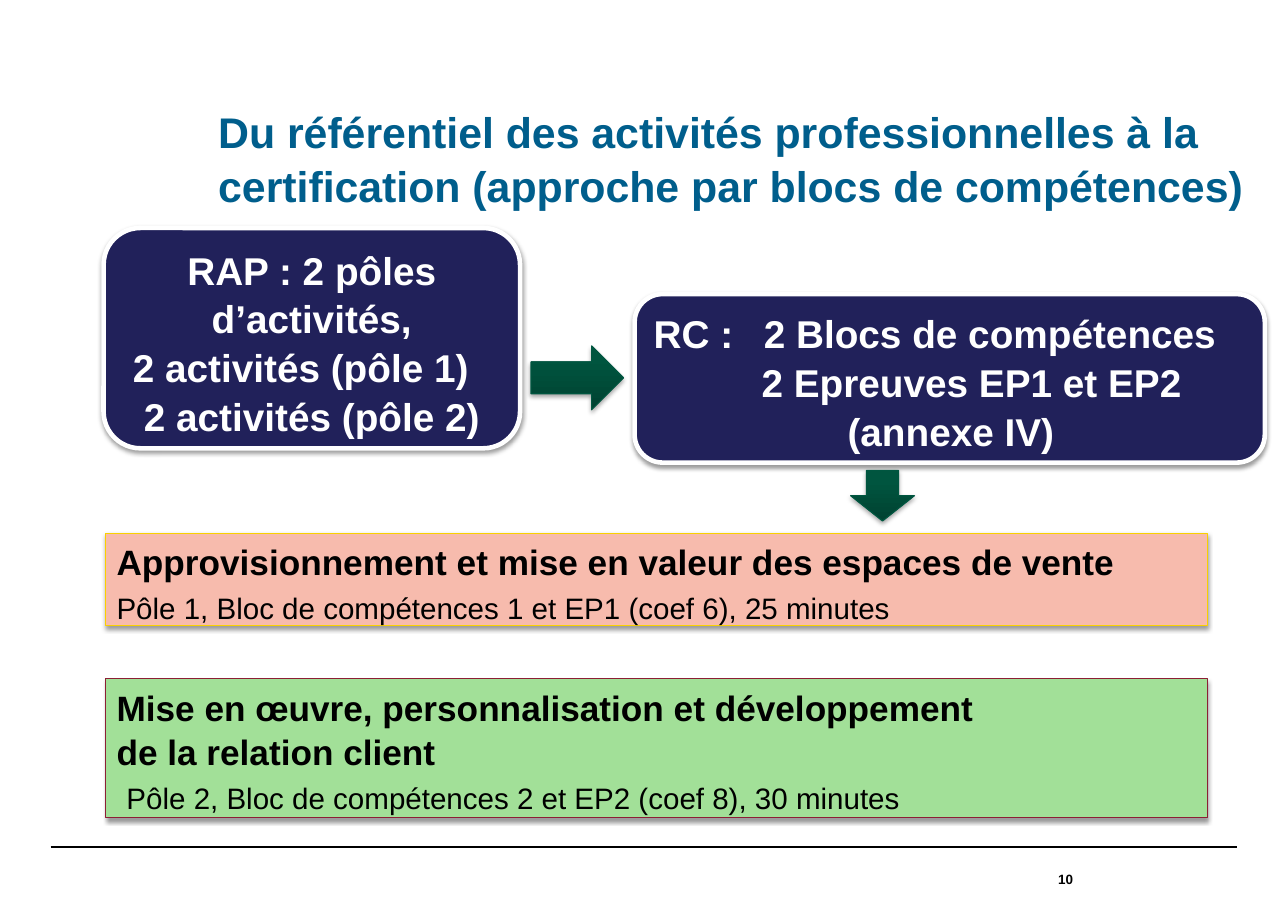
from pptx import Presentation
from pptx.dml.color import RGBColor
from pptx.enum.shapes import MSO_CONNECTOR as Link, MSO_SHAPE as Shape
from pptx.enum.text import MSO_ANCHOR as Anchor, PP_ALIGN as Align
from pptx.oxml.ns import qn
from pptx.util import Inches, Pt
from lxml.etree import SubElement as Sub

FONT = "Arial"
NAVY, WHITE, BLACK = "21215A", "FFFFFF", "000000"


def color(code):
    return RGBColor.from_string(code)


def place(box):
    return [Inches(v) for v in box]


def write(frame, rows, tint=BLACK, align=Align.LEFT, anchor=Anchor.TOP):
    """Fill a frame with rows of (text, size, bold, layout options)."""
    frame.word_wrap = True
    frame.vertical_anchor = anchor
    for i, (text, size, bold, opts) in enumerate(rows):
        para = frame.paragraphs[0] if i == 0 else frame.add_paragraph()
        para.text = text
        para.alignment = align
        para.line_spacing = opts.get("lead", 1.05)
        para.space_before = Pt(opts.get("before", 0))
        para.space_after = Pt(opts.get("after", 0))
        props = para._p.get_or_add_pPr()
        for side in ("marL", "marR"):
            props.set(side, str(Inches(opts.get(side, 0))))
        props.set("indent", "0")
        if "tab" in opts:
            tabs = Sub(props, qn("a:tabLst"))
            Sub(tabs, qn("a:tab"), pos=str(Inches(opts["tab"])), algn="l")
        for run in para.runs:
            font = run.font
            font.name, font.size, font.bold = FONT, Pt(size), bold
            font.color.rgb = color(tint)


def shade(shape, alpha):
    """Give the shape a soft shadow that falls straight down."""
    shape.shadow.inherit = False
    effects = shape._element.spPr.find(qn("a:effectLst"))
    outer = Sub(effects, qn("a:outerShdw"), blurRad=str(Pt(3.1)),
                dist=str(Pt(1.7)), dir="5400000", rotWithShape="0")
    tone = Sub(outer, qn("a:srgbClr"), val=BLACK)
    Sub(tone, qn("a:alpha"), val=str(alpha * 1000))


def draw(slide, kind, box, edge, width, fill=None, alpha=38):
    shape = slide.shapes.add_shape(kind, *place(box))
    if fill:
        shape.fill.solid()
        shape.fill.fore_color.rgb = color(fill)
    shape.line.color.rgb = color(edge)
    shape.line.width = Pt(width)
    shade(shape, alpha)
    return shape


def add_title(slide, box, text):
    title = slide.shapes.title
    title.left, title.top, title.width, title.height = place(box)
    write(title.text_frame, [(text, 28, True, {})], "005E8C")


def add_card(slide, box, rows, align):
    card = draw(slide, Shape.ROUNDED_RECTANGLE, box, WHITE, 3, NAVY)
    rows = [(text, 25.3, True, opts) for text, opts in rows]
    write(card.text_frame, rows, WHITE, align)


def add_band(slide, box, fill, edge, heads, note, opts):
    band = draw(slide, Shape.RECTANGLE, box, edge, 0.75, fill)
    rows = [(head, 23, True, {}) for head in heads]
    write(band.text_frame, rows + [(note, 19.3, False, opts)])


def add_arrow(slide, kind, box):
    arrow = draw(slide, kind, box, "005640", 0.75, alpha=35)
    arrow.fill.gradient()
    arrow.fill.gradient_angle = 90
    stops = zip(arrow.fill.gradient_stops, ("004231", "00553F"), (0, 0.8))
    for stop, tone, spot in stops:
        stop.color.rgb = color(tone)
        stop.position = spot


def add_footer(slide, box, number):
    left, top, width, height = box
    rule = slide.shapes.add_connector(
        Link.STRAIGHT, *place((left, top, left + width, top)))
    rule.line.color.rgb = color(BLACK)
    rule.line.width = Pt(0.8)
    Sub(rule._element.spPr, qn("a:effectLst"))
    page = slide.shapes.add_textbox(
        *place((left + 7.55, top, 1.73, height)))
    frame = page.text_frame
    frame.margin_left = frame.margin_right = 0
    frame.margin_top = frame.margin_bottom = 0
    write(frame, [(number, 8.8, True, {})], align=Align.RIGHT,
          anchor=Anchor.MIDDLE)


def main():
    deck = Presentation()
    deck.slide_width, deck.slide_height = Inches(11.69), Inches(8.27)
    slide = deck.slides.add_slide(deck.slide_layouts[5])

    # Heading and footer
    add_title(slide, (1.88, 0.89, 9.61, 1.04),
              "Du référentiel des activités professionnelles à la "
              "certification (approche par blocs de compétences)")
    add_footer(slide, (0.46, 7.69, 10.77, 0.58), "10")

    # Activities lead to skills
    add_card(slide, (0.94, 2.07, 3.78, 2), [
        ("RAP : 2 pôles d’activités,", {}),
        ("2 activités (pôle 1)", {"marR": 0.2}),
        ("2 activités (pôle 2)", {})], Align.CENTER)
    add_card(slide, (5.76, 2.67, 5.72, 1.53), [
        ("RC :\t2 Blocs de compétences", {"tab": 0.92}),
        ("2 Epreuves EP1 et EP2", {"marL": 0.98}),
        ("(annexe IV)", {"marL": 1.76})], Align.LEFT)
    add_arrow(slide, Shape.RIGHT_ARROW, (4.82, 3.14, 0.84, 0.58))
    add_arrow(slide, Shape.DOWN_ARROW, (7.72, 4.27, 0.58, 0.46))

    # The two blocks and their exams
    add_band(slide, (0.96, 4.84, 10, 0.84), "F7BBAD", "F9D000",
             ["Approvisionnement et mise en valeur des espaces de vente"],
             "Pôle 1, Bloc de compétences 1 et EP1 (coef 6), 25 minutes",
             {"lead": 1.15, "before": 1.1, "after": 1.1})
    add_band(slide, (0.96, 6.16, 10, 1.26), "A2E098", "8C1F34",
             ["Mise en œuvre, personnalisation et développement",
              "de la relation client"],
             "Pôle 2, Bloc de compétences 2 et EP2 (coef 8), 30 minutes",
             {"marL": 0.09, "before": 4})

    deck.save("out.pptx")


if __name__ == "__main__":
    main()
